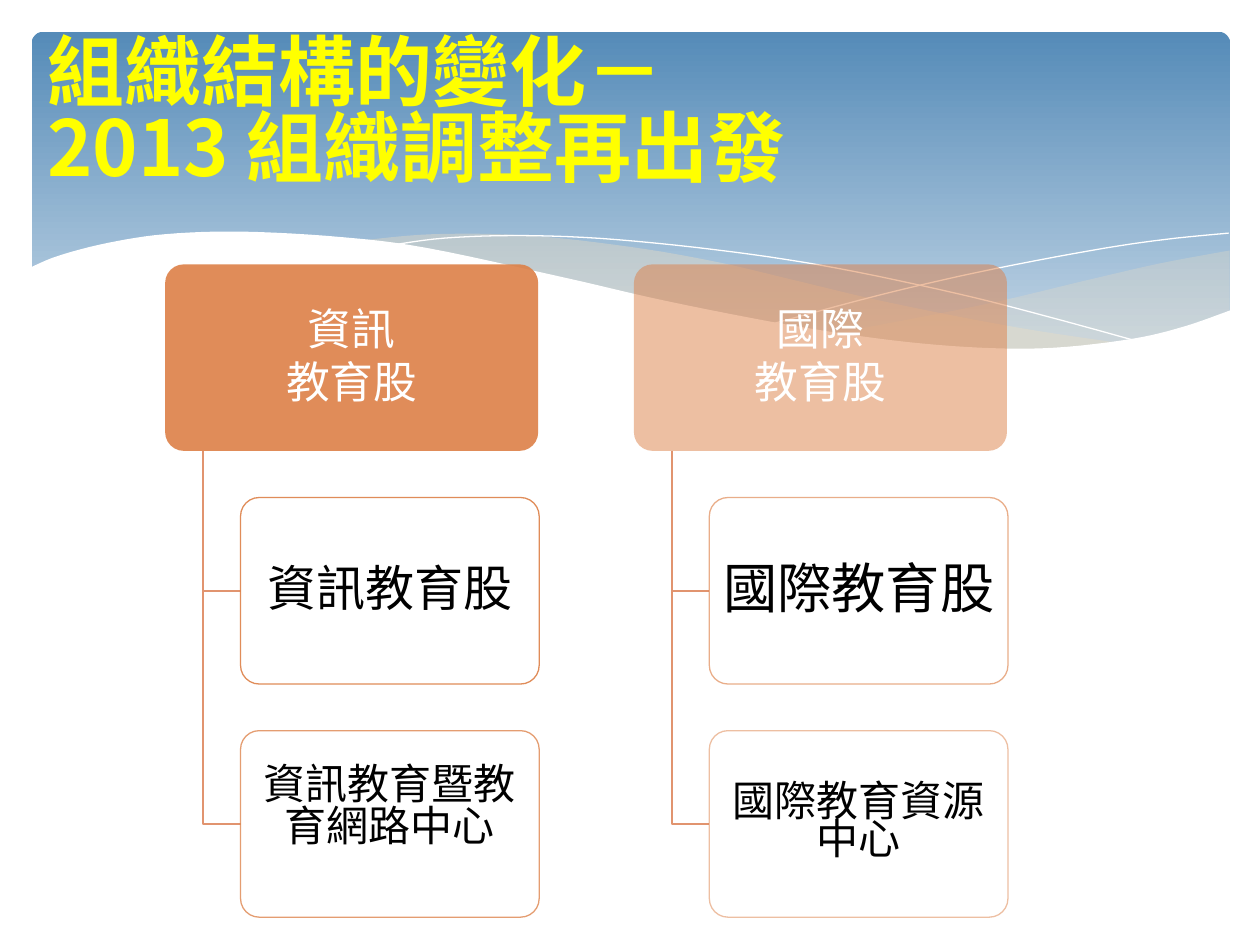
from lxml.etree import SubElement
from pptx import Presentation
from pptx.dml.color import RGBColor
from pptx.enum.shapes import MSO_SHAPE as Shape
from pptx.enum.text import MSO_ANCHOR as Anchor, PP_ALIGN as Align
from pptx.oxml.ns import qn
from pptx.util import Cm, Pt

FONT = "Noto Sans CJK SC"
COLORS = {
    "sky": "558BB8", "mist": "BFD3E4", "sand": "EBDDC3", "white": "FFFFFF",
    "title": "FFFF00", "orange": "DD8047", "branch": "E1946F", "ink": "000000",
}


def rgb(name):
    return RGBColor.from_string(COLORS[name])


def paint(fill, color, opacity=100):
    """Solid colour with an opacity in percent."""
    fill.solid()
    fill.fore_color.rgb = rgb(color)
    if opacity < 100:
        tint = fill._xPr.find(qn("a:solidFill"))[0]
        SubElement(tint, qn("a:alpha"), val=str(opacity * 1000))


def smooth(knots, steps=6):
    """Catmull-Rom curve through the knots, as a list of points."""
    padded = [knots[0], *knots, knots[-1]]
    curve = []
    for a, b, c, d in zip(padded, padded[1:], padded[2:], padded[3:]):
        for step in range(steps):
            t = step / steps
            curve.append(tuple(
                q + t / 2 * (r - p + t * (2 * p - 5 * q + 4 * r - s
                                          + t * (3 * (q - r) + s - p)))
                for p, q, r, s in zip(a, b, c, d)))
    return curve + [knots[-1]]


def write(frame, lines, size, color, bold=False, align=Align.CENTER,
          spacing=0.9, after=0, insets=(0.13, 0.08, 0.13, 0.08)):
    """Fill a text frame, one paragraph per line."""
    frame.word_wrap = True
    frame.vertical_anchor = Anchor.MIDDLE
    (frame.margin_left, frame.margin_top,
     frame.margin_right, frame.margin_bottom) = map(Cm, insets)
    for index, line in enumerate(lines):
        para = frame.add_paragraph() if index else frame.paragraphs[0]
        para.text = line
        para.alignment = align
        para.line_spacing = spacing
        para.space_after = Pt(after)
        for run in para.runs:
            run.font.name = FONT
            run.font.size = Pt(size)
            run.font.bold = bold
            run.font.color.rgb = rgb(color)
            SubElement(run._r.get_or_add_rPr(), qn("a:ea"), typeface=FONT)


class Deck:
    def __init__(self):
        self.prs = Presentation()
        self.prs.slide_width, self.prs.slide_height = Cm(25.4), Cm(19.05)
        self.slide = self.prs.slides.add_slide(self.prs.slide_layouts[6])
        self.shapes = self.slide.shapes

    def panel(self, left, top, width, height, radius):
        card = self.shapes.add_shape(Shape.ROUNDED_RECTANGLE, Cm(left), Cm(top),
                                     Cm(width), Cm(height))
        card.adjustments[0] = radius
        card.shadow.inherit = False
        card.line.fill.background()
        return card

    def banner(self, *box):
        backdrop = self.panel(*box, radius=0.034)
        backdrop.fill.gradient()
        backdrop.fill.gradient_angle = 270
        for stop, color, place in zip(backdrop.fill.gradient_stops,
                                      ("sky", "mist"), (0, 0.9)):
            stop.color.rgb = rgb(color)
            stop.position = place

    def outline(self, points, fill=None, opacity=100, line=None, width=0):
        start, *rest = [(Cm(x), Cm(y)) for x, y in points]
        builder = self.shapes.build_freeform(*start)
        builder.add_line_segments(rest, close=fill is not None)
        form = builder.convert_to_shape()
        form.shadow.inherit = False
        if fill:
            paint(form.fill, fill, opacity)
        else:
            form.fill.background()
        if line:
            paint(form.line.fill, line)
            form.line.width = Pt(width)
        else:
            form.line.fill.background()

    def box(self, left, top, width, height, lines, fill, opacity,
            border=None, **style):
        card = self.panel(left, top, width, height, radius=0.1)
        paint(card.fill, fill, opacity)
        if border:
            paint(card.line.fill, "orange", border)
            card.line.width = Pt(0.75)
        write(card.text_frame, lines, **style)

    def title(self, left, top, width, height, text):
        heading = self.shapes.add_textbox(Cm(left), Cm(top), Cm(width), Cm(height))
        write(heading.text_frame, [text], size=44, color="title", bold=True,
              align=Align.LEFT, spacing=0.83, insets=(0.25, 0.13, 0.25, 0.13))


# Wave edges, in centimetres
RIGHT_BAND_TOP = [(24.79, 5.05), (23.39, 5.31), (21.87, 5.66), (19.79, 6.15),
                  (16.79, 6.73)]
RIGHT_BAND_BOTTOM = [(16.79, 6.73), (18.24, 6.91), (19.84, 7.04), (21.21, 7.04),
                     (22.58, 6.91), (23.75, 6.63), (24.79, 6.27)]
LEFT_BAND_TOP = [(7.26, 4.85), (8.74, 4.72), (10.67, 4.75), (12.73, 4.98),
                 (14.45, 5.28), (15.98, 5.64), (17.93, 6.1), (20.5, 6.6),
                 (22.68, 6.93)]
LEFT_BAND_BOTTOM = [(22.68, 6.93), (21.54, 7.04), (19.94, 7.06), (18.01, 6.91),
                    (15.7, 6.55), (13.46, 6.1), (11.4, 5.64), (9.19, 5.16),
                    (7.26, 4.85)]
FALLING_THREAD = [(7.85, 4.95), (8.97, 4.8), (10.57, 4.75), (12.42, 4.83),
                  (14.78, 5.08), (16.89, 5.41), (19.3, 5.92), (21.11, 6.38),
                  (23.04, 6.91)]
RISING_THREAD = [(15.57, 6.53), (17.65, 5.97), (19.71, 5.49), (22, 5.05),
                 (23.47, 4.83), (24.77, 4.7)]
PAGE_EDGE = [(0.58, 5.41), (1.17, 5.16), (2.16, 4.9), (3.35, 4.72), (4.9, 4.67),
             (6.88, 4.78), (8.61, 5), (11.35, 5.59), (13.44, 6.07), (15.9, 6.55),
             (17.98, 6.86), (19.76, 7.01), (21.26, 7.01), (22.83, 6.83),
             (23.88, 6.58), (24.82, 6.25)]

# Sections: left edge, header lines, header opacity, then the units below
# (text, border opacity, text format)
SECTIONS = [
    (3.33, ["資訊", "教育股"], 90, [
        ("資訊教育股", 90, dict(size=28)),
        ("資訊教育暨教育網路中心", 77,
         dict(size=24, spacing=0.84, insets=(0.13, 0.08, 0.13, 0.73)))]),
    (12.78, ["國際", "教育股"], 50, [
        ("國際教育股", 63, dict(size=31)),
        ("國際教育資源中心", 50, dict(size=24, spacing=0.77))]),
]
HEAD_TOP, HEAD_WIDTH, BOX_HEIGHT = 5.33, 7.52, 3.76
UNIT_WIDTH, UNIT_INDENT, ROW_PITCH = 6.02, 1.52, 4.7


def main():
    deck = Deck()

    # Banner with waves
    deck.banner(0.64, 0.64, 24.16, 6.86)
    deck.outline(smooth(RIGHT_BAND_TOP) + smooth(RIGHT_BAND_BOTTOM), "sand", 29)
    deck.outline(smooth(LEFT_BAND_TOP) + smooth(LEFT_BAND_BOTTOM), "sand", 40)
    for thread in (FALLING_THREAD, RISING_THREAD):
        deck.outline(smooth(thread), line="white")
    deck.outline(smooth(PAGE_EDGE) + [(24.82, 8.36), (0.58, 8.36)], "white")

    deck.title(0.71, 0.74, 22.86, 3.18, "組織結構的變化－\v2013 組織調整再出發")

    # Organisation chart
    for left, header, opacity, units in SECTIONS:
        deck.box(left, HEAD_TOP, HEAD_WIDTH, BOX_HEIGHT, header, "orange", opacity,
                 size=25, color="white", after=3)
        trunk, unit_left = left + UNIT_INDENT / 2, left + UNIT_INDENT
        for row, (name, border, style) in enumerate(units, start=1):
            top = HEAD_TOP + row * ROW_PITCH
            middle = top + BOX_HEIGHT / 2
            deck.outline([(trunk, HEAD_TOP + BOX_HEIGHT), (trunk, middle),
                          (unit_left, middle)], line="branch", width=1.25)
            deck.box(unit_left, top, UNIT_WIDTH, BOX_HEIGHT, [name], "white", 90,
                     border, color="ink", **style)

    deck.prs.save("out.pptx")


if __name__ == "__main__":
    main()
